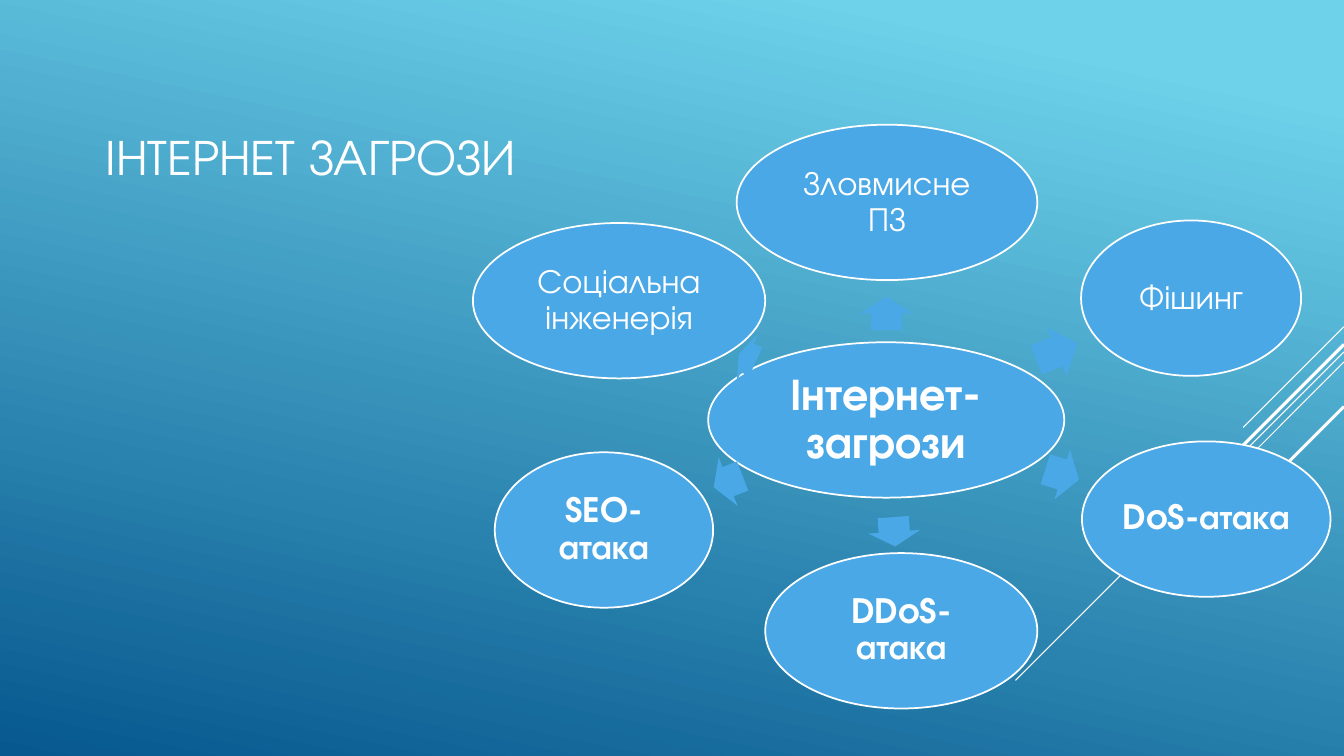
import math
from dataclasses import dataclass

import pptx
import pptx.dml.color
import pptx.enum.shapes
import pptx.enum.text
import pptx.oxml.ns
import pptx.util
from lxml import etree

SHAPE = pptx.enum.shapes.MSO_SHAPE
COLS, ROWS = 160, 90
CELL = pptx.util.Inches(7.5) / ROWS


@dataclass(frozen=True)
class Theme:
    font: str = "TeX Gyre Adventor"
    white: str = "FFFFFF"
    blue: str = "4AA8E7"
    light: str = "6ED2EB"
    dark: str = "06588E"
    title: int = 36
    hub: int = 32
    node: int = 24
    edge: float = 1.25


def grid(n):
    return pptx.util.Emu(round(n * CELL))


def rgb(code):
    return pptx.dml.color.RGBColor.from_string(code)


class Board:
    def __init__(self, deck, theme):
        self.theme = theme
        self.slide = deck.slides.add_slide(deck.slide_layouts[5])

    def back(self, angle):
        fill = self.slide.background.fill
        fill.gradient()
        fill.gradient_angle = 360 - angle
        tones = ((0.1, self.theme.light), (1, self.theme.dark))
        for stop, (place, code) in zip(fill.gradient_stops, tones):
            stop.position = place
            stop.color.rgb = rgb(code)

    def label(self, frame, text, size, align, bold=False):
        frame.text = text
        frame.word_wrap = True
        frame.vertical_anchor = pptx.enum.text.MSO_ANCHOR.MIDDLE
        para = frame.paragraphs[0]
        para.alignment = align
        para.line_spacing = 0.9
        para.font.name = self.theme.font
        para.font.size = pptx.util.Pt(size)
        para.font.bold = bold
        para.font.color.rgb = rgb(self.theme.white)

    def title(self, text, x, y, w, h):
        box = self.slide.shapes.title
        box.left, box.top, box.width, box.height = map(grid, (x, y, w, h))
        self.label(box.text_frame, text, self.theme.title,
                   pptx.enum.text.PP_ALIGN.LEFT)

    def ray(self, y, run, width):
        """Draw a 45-degree line from the right edge down to the left."""
        line = self.slide.shapes.add_connector(
            pptx.enum.shapes.MSO_CONNECTOR.STRAIGHT,
            grid(COLS), grid(y), grid(COLS - run), grid(y + run))
        line.line.color.rgb = rgb(self.theme.white)
        line.line.width = pptx.util.Pt(width)
        etree.SubElement(line._element.spPr, pptx.oxml.ns.qn("a:effectLst"))

    def shape(self, kind, mid, w, h):
        x, y = mid
        item = self.slide.shapes.add_shape(
            kind, grid(x - w / 2), grid(y - h / 2), grid(w), grid(h))
        item.shadow.inherit = False
        item.fill.solid()
        item.fill.fore_color.rgb = rgb(self.theme.blue)
        return item

    def oval(self, text, mid, w, size, bold):
        item = self.shape(SHAPE.OVAL, mid, w, 18.5)
        item.line.color.rgb = rgb(self.theme.white)
        item.line.width = pptx.util.Pt(self.theme.edge)
        frame = item.text_frame
        frame.margin_left = frame.margin_right = grid(0.4)
        frame.margin_top = frame.margin_bottom = grid(0.4)
        self.label(frame, text, size, pptx.enum.text.PP_ALIGN.CENTER, bold)

    def arrow(self, start, end, share, length):
        """Place an arrow at a share of the way from start to end."""
        dx, dy = end[0] - start[0], end[1] - start[1]
        mid = start[0] + dx * share, start[1] + dy * share
        item = self.shape(SHAPE.RIGHT_ARROW, mid, length, 6.2)
        item.adjustments[0], item.adjustments[1] = 0.6, 0.5
        item.rotation = math.degrees(math.atan2(dy, dx)) % 360
        item.line.fill.background()


# Top of each ray, its run, its width in points
RAYS = [(38.9, 12, 0.75), (41.9, 39.1, 0.75), (43.1, 24.8, 0.75),
        (41, 22.9, 2.25), (48.4, 16.7, 2.25)]

# Threat, centre, oval width, bold, arrow share and length
HUB = (105.5, 50)
NODES = [
    ("Зловмисне ПЗ", (105.6, 24.1), 35.8, False, 0.49, 4),
    ("Фішинг", (141.8, 35.5), 26.2, False, 0.56, 5.3),
    ("DoS-атака", (143.6, 61.8), 29.6, True, 0.55, 4.2),
    ("DDoS-атака", (107.3, 75.1), 32.4, True, 0.53, 3.5),
    ("SEO-атака", (71.9, 63.1), 26, True, 0.56, 3.7),
    ("Соціальна інженерія", (73.7, 35.8), 34.8, False, 0.52, 2.2),
]


def main():
    deck = pptx.Presentation()
    deck.slide_width, deck.slide_height = grid(COLS), grid(ROWS)
    theme = Theme()
    board = Board(deck, theme)

    # Background and corner rays
    board.back(102)
    for ray in RAYS:
        board.ray(*ray)

    # Title
    board.title("ІНТЕРНЕТ ЗАГРОЗИ", 11.4, 9, 112, 19.8)

    # Hub with its threats around it
    board.oval("Інтернет-загрози", HUB, 42.4, theme.hub, True)
    for text, mid, width, bold, share, length in NODES:
        board.arrow(HUB, mid, share, length)
        board.oval(text, mid, width, theme.node, bold)

    deck.save("out.pptx")


if __name__ == "__main__":
    main()
